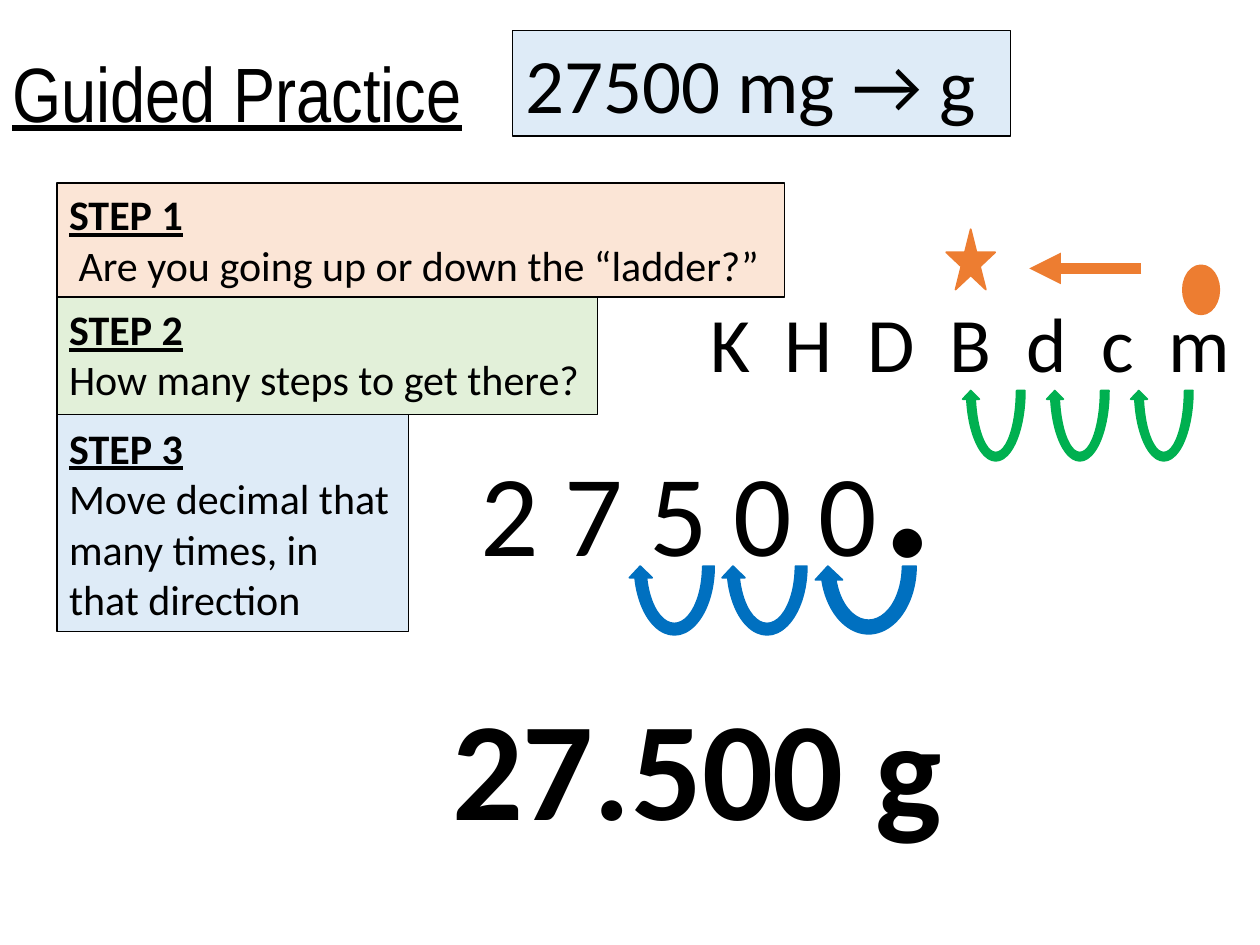
import pptx
import pptx.util
import pptx.dml.color
import pptx.enum.shapes
import pptx.enum.text
import pptx.oxml.ns
from lxml import etree

Pt = pptx.util.Pt
SHAPE = pptx.enum.shapes.MSO_SHAPE
ANCHOR = pptx.enum.text.MSO_ANCHOR
ALIGN = pptx.enum.text.PP_ALIGN
GROW = pptx.enum.text.MSO_AUTO_SIZE.SHAPE_TO_FIT_TEXT
ORANGE, GREEN, BLUE = "ED7D31", "00B050", "0070C0"
BODY = {"name": "Calibri", "size": Pt(24)}
STEP = {**BODY, "bold": True, "underline": True}
LARGE = {**BODY, "size": Pt(44)}


def color(value):
    """Turn a hex string into a colour."""
    return pptx.dml.color.RGBColor.from_string(value)


def add_shape(s, kind, box, fill, line, width):
    """Add a filled and outlined preset shape."""
    sp = s.shapes.add_shape(kind, *map(Pt, box))
    sp.shadow.inherit = False
    sp.fill.solid()
    sp.fill.fore_color.rgb = color(fill)
    sp.line.color.rgb = color(line)
    sp.line.width = Pt(width)
    return sp


def add_textbox(s, box):
    """Add an empty text box."""
    return s.shapes.add_textbox(*map(Pt, box))


def write(sp, paragraphs, align=ALIGN.LEFT, **frame):
    """Write paragraphs, each a list of text and font format pairs."""
    tf = sp.text_frame
    settings = {"word_wrap": True, "vertical_anchor": ANCHOR.TOP, **frame}
    for name, value in settings.items():
        setattr(tf, name, value)
    for i, runs in enumerate(paragraphs):
        p = tf.add_paragraph() if i else tf.paragraphs[0]
        p.alignment = align
        for text, font in runs:
            r = p.add_run()
            r.text = text
            r.font.color.rgb = color("000000")
            for name, value in font.items():
                setattr(r.font, name, value)


def add_hops(s, left, top, pitch, widths, fill):
    """Add a row of curved arrows that hop to the left."""
    for i, width in enumerate(widths):
        box = (left + i * pitch, top, width, 85)
        sp = add_shape(s, SHAPE.CIRCULAR_ARROW, box, fill, fill, 1)
        sp.rotation = 180


def add_heading(s, left, top):
    """Add the title and the conversion problem."""
    title = add_textbox(s, (left, top, 620, 104.5))
    font = {"name": "Arial Narrow", "size": Pt(44), "underline": True}
    write(title, [[("Guided Practice", font)]], vertical_anchor=ANCHOR.MIDDLE)
    title.text_frame.paragraphs[0].line_spacing = 0.9
    box = (left + 293, top + 13.7, 284.4, 60.5)
    problem = add_shape(s, SHAPE.RECTANGLE, box, "DEEBF7", "000000", 0.75)
    write(problem, [[("27500 mg → g", LARGE)]], auto_size=GROW)


def add_steps(s, left, top):
    """Stack the three step boxes."""
    steps = [
        (416, 65.5, "FBE5D6", ANCHOR.TOP, " Are you going up or down the “ladder?”"),
        (309, 67, "E2F0D9", ANCHOR.TOP, "How many steps to get there?"),
        (201, 124, "DEEBF7", ANCHOR.MIDDLE,
         "Move decimal that many times, in that direction"),
    ]
    for number, (width, height, fill, anchor, text) in enumerate(steps, 1):
        box = (left, top, width, height)
        sp = add_shape(s, SHAPE.RECTANGLE, box, fill, "000000", 1)
        write(sp, [[(f"STEP {number}", STEP)], [(text, BODY)]],
              vertical_anchor=anchor)
        top += height


def add_ladder(s, left, top):
    """Add the unit ladder with its start, goal, direction and hops."""
    units = add_textbox(s, (left, top + 34.5, 316, 60.5))
    write(units, [[("K  H  D  B  d  c  m", LARGE)]], ALIGN.CENTER, auto_size=GROW)
    add_shape(s, SHAPE.OVAL, (left + 281, top + 22.4, 17.3, 24.5),
              ORANGE, ORANGE, 4.5)
    add_shape(s, SHAPE.STAR_5_POINT, (left + 144, top, 28, 34.5),
              ORANGE, ORANGE, 1)
    add_hops(s, left + 153.3, top + 49.7, 48, [38] * 3, GREEN)
    ends = (left + 255.6, top + 22.4, left + 191.5, top + 22.4)
    arrow = s.shapes.add_connector(
        pptx.enum.shapes.MSO_CONNECTOR.STRAIGHT, *map(Pt, ends))
    arrow.line.color.rgb = color(ORANGE)
    arrow.line.width = Pt(6)
    qn = pptx.oxml.ns.qn
    etree.SubElement(arrow.line._get_or_add_ln(), qn("a:tailEnd"), type="triangle")
    etree.SubElement(arrow._element.spPr, qn("a:effectLst"))


def add_decimal(s, left, top):
    """Add the spaced number and the hops of its decimal point."""
    number = add_textbox(s, (left, top, 344, 174.5))
    runs = [("2 7 5 0 0", {**BODY, "size": Pt(66)}),
            (".", {**BODY, "size": Pt(138)})]
    write(number, [runs], ALIGN.CENTER, auto_size=GROW)
    add_hops(s, left + 126, top + 104.6, 53, [52, 52, 62], BLUE)


def add_answer(s, left, top):
    """Add the converted value."""
    answer = add_textbox(s, (left, top, 430, 104.5))
    font = {**BODY, "size": Pt(80), "bold": True}
    write(answer, [[("27.500 g", font)]], auto_size=GROW)


def main():
    """Build the slide and save it."""
    prs = pptx.Presentation()
    prs.slide_width, prs.slide_height = Pt(720), Pt(540)
    s = prs.slides.add_slide(prs.slide_layouts[6])
    add_heading(s, 0, 3.6)
    add_steps(s, 32.4, 104.4)
    add_ladder(s, 396.7, 131)
    add_decimal(s, 233.3, 176.4)
    add_answer(s, 251.3, 385.2)
    prs.save("out.pptx")


if __name__ == "__main__":
    main()
